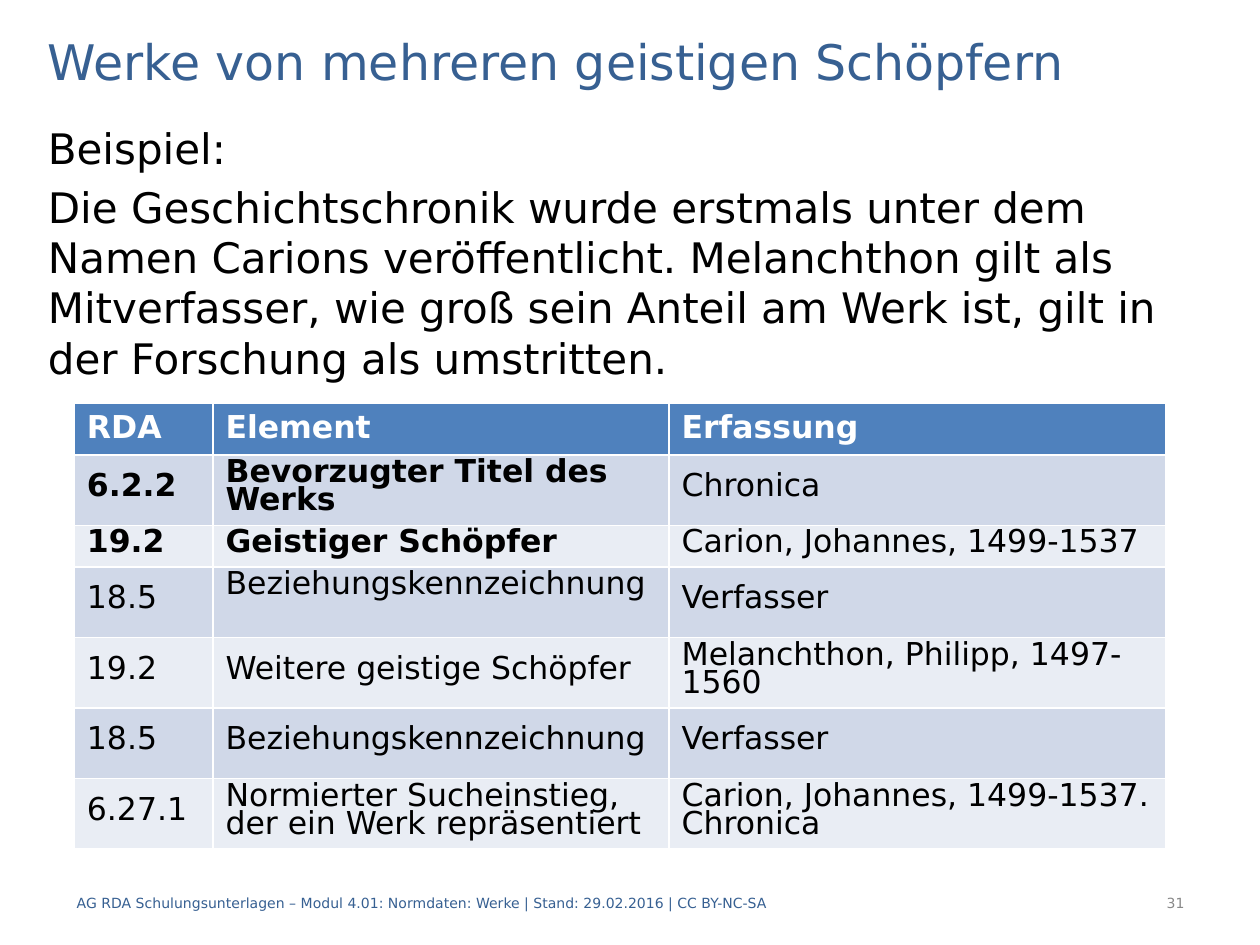
from pptx import Presentation, util as u
from pptx.dml.color import RGBColor
from pptx.enum import text as t
from pptx.oxml import ns
from lxml import etree

FONT = "DejaVu Sans"
HEX = {
    "title": "376092",
    "text": "000000",
    "page": "898989",
    "head": "4F81BD",
    "white": "FFFFFF",
    "odd": "D0D8E8",
    "even": "E9EDF4",
}
COLS = [1.1, 3.62, 3.94]
ROWS = [0.41, 0.56, 0.33, 0.56, 0.56, 0.56, 0.56]
BOLD = 3  # the header and the two core elements
# \v is a line break inside a paragraph
DATA = [
    ("RDA", "Element", "Erfassung"),
    ("6.2.2", "Bevorzugter Titel des Werks", "Chronica"),
    ("19.2", "Geistiger Schöpfer", "Carion, Johannes, 1499-1537"),
    ("18.5", "Beziehungskennzeichnung\v", "Verfasser"),
    ("19.2", "Weitere geistige Schöpfer", "Melanchthon, Philipp, 1497-1560"),
    ("18.5", "Beziehungskennzeichnung", "Verfasser"),
    ("6.27.1", "Normierter Sucheinstieg, der ein Werk repräsentiert",
     "Carion, Johannes, 1499-1537. Chronica"),
]
BODY = [
    "Beispiel:",
    "Die Geschichtschronik wurde erstmals unter dem Namen Carions "
    "veröffentlicht. Melanchthon gilt als Mitverfasser, wie groß sein Anteil "
    "am Werk ist, gilt in der Forschung als umstritten.",
]


def style(frame, size, color, bold=False, align=t.PP_ALIGN.LEFT):
    """Format every run of a text frame."""
    for par in frame.paragraphs:
        par.alignment = align
        for run in par.runs:
            run.font.name = FONT
            run.font.size = u.Pt(size)
            run.font.bold = bold
            run.font.color.rgb = RGBColor.from_string(HEX[color])


def place(shape, left, top, width, height):
    shape.left, shape.top = u.Inches(left), u.Inches(top)
    shape.width, shape.height = u.Inches(width), u.Inches(height)


def add_title(slide, words):
    title = slide.shapes.title
    place(title, 0.28, 0.2, 9.45, 0.56)
    frame = title.text_frame
    frame.text = words
    frame.auto_size = t.MSO_AUTO_SIZE.NONE
    frame.vertical_anchor = t.MSO_ANCHOR.MIDDLE
    style(frame, 28, "title")


def add_body(slide, lines):
    body = slide.placeholders[1]
    place(body, 0.28, 0.92, 9.45, 5.98)
    frame = body.text_frame
    frame.text = "\n".join(lines)
    frame.auto_size = t.MSO_AUTO_SIZE.NONE
    style(frame, 24, "text")
    for par in frame.paragraphs:
        props = par._p.get_or_add_pPr()
        props.set("marL", "0")
        props.set("indent", "0")
        etree.SubElement(props, ns.qn("a:buNone"))


def add_note(slide, words, left, width, color, align):
    """Add a small text to the footer line."""
    box = slide.shapes.add_textbox(
        u.Inches(left), u.Inches(6.97), u.Inches(width), u.Inches(0.4))
    frame = box.text_frame
    frame.word_wrap = True
    frame.vertical_anchor = t.MSO_ANCHOR.MIDDLE
    frame.text = words
    style(frame, 8, color, align=align)


def fill_cell(cell, words, row, col):
    head = row == 0
    frame = cell.text_frame
    par = frame.paragraphs[0]
    par.text = words
    style(frame, 18, "white" if head else "text",
          bold=head or (row < BOLD and col < 2))
    cell.fill.solid()
    back = "head" if head else "odd" if row % 2 else "even"
    cell.fill.fore_color.rgb = RGBColor.from_string(HEX[back])
    if not head:
        cell.vertical_anchor = t.MSO_ANCHOR.MIDDLE
        par.line_spacing = u.Pt(16)
        par.space_before = par.space_after = u.Pt(6)


def add_grid(slide):
    grid = slide.shapes.add_table(
        len(ROWS), len(COLS), u.Inches(0.59), u.Inches(3.2),
        u.Inches(sum(COLS)), u.Inches(sum(ROWS))).table
    for col, width in zip(grid.columns, COLS):
        col.width = u.Inches(width)
    for row, height in zip(grid.rows, ROWS):
        row.height = u.Inches(height)
    for r, line in enumerate(DATA):
        for c, words in enumerate(line):
            fill_cell(grid.cell(r, c), words, r, c)


def main():
    deck = Presentation()
    deck.slide_width, deck.slide_height = u.Inches(10), u.Inches(7.5)
    slide = deck.slides.add_slide(deck.slide_layouts[1])
    add_title(slide, "Werke von mehreren geistigen Schöpfern")
    add_body(slide, BODY)
    add_note(slide, "AG RDA Schulungsunterlagen – Modul 4.01: Normdaten: Werke "
             "| Stand: 29.02.2016 | CC BY-NC-SA",
             0.51, 6.69, "title", t.PP_ALIGN.LEFT)
    add_note(slide, "31", 7.91, 1.59, "page", t.PP_ALIGN.RIGHT)
    add_grid(slide)
    deck.save("out.pptx")


if __name__ == "__main__":
    main()
